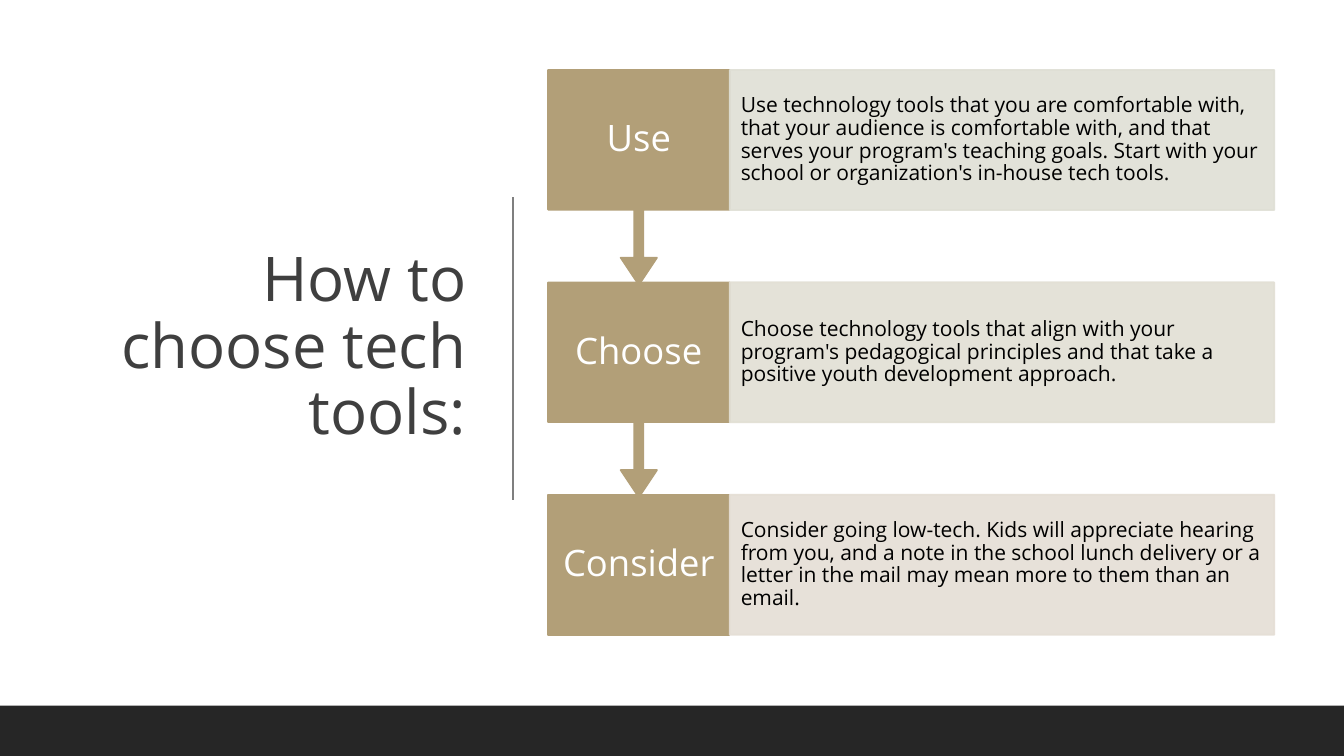
from lxml.etree import SubElement
from pptx import Presentation
from pptx.dml.color import RGBColor
from pptx.enum.shapes import MSO_CONNECTOR, MSO_SHAPE
from pptx.enum.text import MSO_ANCHOR, MSO_AUTO_SIZE, PP_ALIGN
from pptx.oxml.ns import qn
from pptx.util import Pt

TITLE = "How to choose tech tools:"
STEPS = [
    ("Use", "Use technology tools that you are comfortable with, that your audience "
     "is comfortable with, and that serves your program's teaching goals. Start with "
     "your school or organization's in-house tech tools.", "DFDFD5"),
    ("Choose", "Choose technology tools that align with your program's pedagogical "
     "principles and that take a positive youth development approach.", "E2DFD4"),
    ("Consider", "Consider going low-tech. Kids will appreciate hearing from you, and "
     "a note in the school lunch delivery or a letter in the mail may mean more to "
     "them than an email.", "E5DED5"),
]
COLORS = {"title": "3F3F3F", "divider": "7F7F7F", "footer": "262626",
          "step": "B29F78", "label": "FFFFFF", "body": "000000"}
FONT = "Open Sans"

W, H = 960, 540
LEFT, TOP, PITCH = 391.5, 50, 151.7
LABEL_W, PANEL_W, BOX_H = 129.7, 389, 100
CALLOUT_H = 153.5
CALLOUT_ADJ = (0.05, 0.1, 0.15, 0.65)


def rgb(color):
    return RGBColor.from_string(color)


def add_box(kind, x, y, w, h, fill, line=True):
    sp = s.shapes.add_shape(kind, Pt(x), Pt(y), Pt(w), Pt(h))
    sp.shadow.inherit = False
    sp.fill.solid()
    sp.fill.fore_color.rgb = rgb(fill)
    if line:
        sp.line.color.rgb = rgb(fill)
        sp.line.width = Pt(1.25)
    else:
        sp.line.fill.background()
    return sp


def set_text(sp, text, size, color, align, inset_x, inset_y):
    tf = sp.text_frame
    tf.word_wrap = True
    tf.auto_size = MSO_AUTO_SIZE.NONE
    tf.vertical_anchor = MSO_ANCHOR.MIDDLE
    tf.margin_left = tf.margin_right = Pt(inset_x)
    tf.margin_top = tf.margin_bottom = Pt(inset_y)
    tf.text = text
    p = tf.paragraphs[0]
    p.alignment, p.line_spacing = align, 0.9
    p.font.name, p.font.size = FONT, Pt(size)
    p.font.color.rgb = rgb(color)


def make_translucent(sp, percent):
    for clr in sp._element.spPr.iter(qn("a:srgbClr")):
        SubElement(clr, qn("a:alpha"), val=str(percent * 1000))


prs = Presentation()
prs.slide_width, prs.slide_height = Pt(W), Pt(H)
s = prs.slides.add_slide(prs.slide_layouts[5])

title = s.shapes.title
title.left, title.top, title.width, title.height = Pt(50.4), Pt(49.7), Pt(290), Pt(398)
set_text(title, TITLE, 44, COLORS["title"], PP_ALIGN.RIGHT, 7.2, 3.6)

divider = s.shapes.add_connector(MSO_CONNECTOR.STRAIGHT, Pt(366.5), Pt(141), Pt(366.5), Pt(357))
divider.line.color.rgb = rgb(COLORS["divider"])
divider.line.width = Pt(1)
SubElement(divider._element.spPr, qn("a:effectLst"))

add_box(MSO_SHAPE.RECTANGLE, 0, 504, W, 36, COLORS["footer"], line=False)

# Later steps go behind, so each arrow tip lies over the next box.
for i, (label, body, tint) in reversed(list(enumerate(STEPS))):
    y = TOP + i * PITCH
    if i < len(STEPS) - 1:
        step = add_box(MSO_SHAPE.DOWN_ARROW_CALLOUT, LEFT, y, LABEL_W, CALLOUT_H, COLORS["step"])
        for n, value in enumerate(CALLOUT_ADJ):
            step.adjustments[n] = value
    else:
        step = add_box(MSO_SHAPE.RECTANGLE, LEFT, y, LABEL_W, BOX_H, COLORS["step"])
    set_text(step, label, 26, COLORS["label"], PP_ALIGN.CENTER, 9.2, 14.4)

    panel = add_box(MSO_SHAPE.RECTANGLE, LEFT + LABEL_W, y, PANEL_W, BOX_H, tint)
    make_translucent(panel, 90)
    set_text(panel, body, 15, COLORS["body"], PP_ALIGN.LEFT, 7.9, 15)

prs.save("out.pptx")
